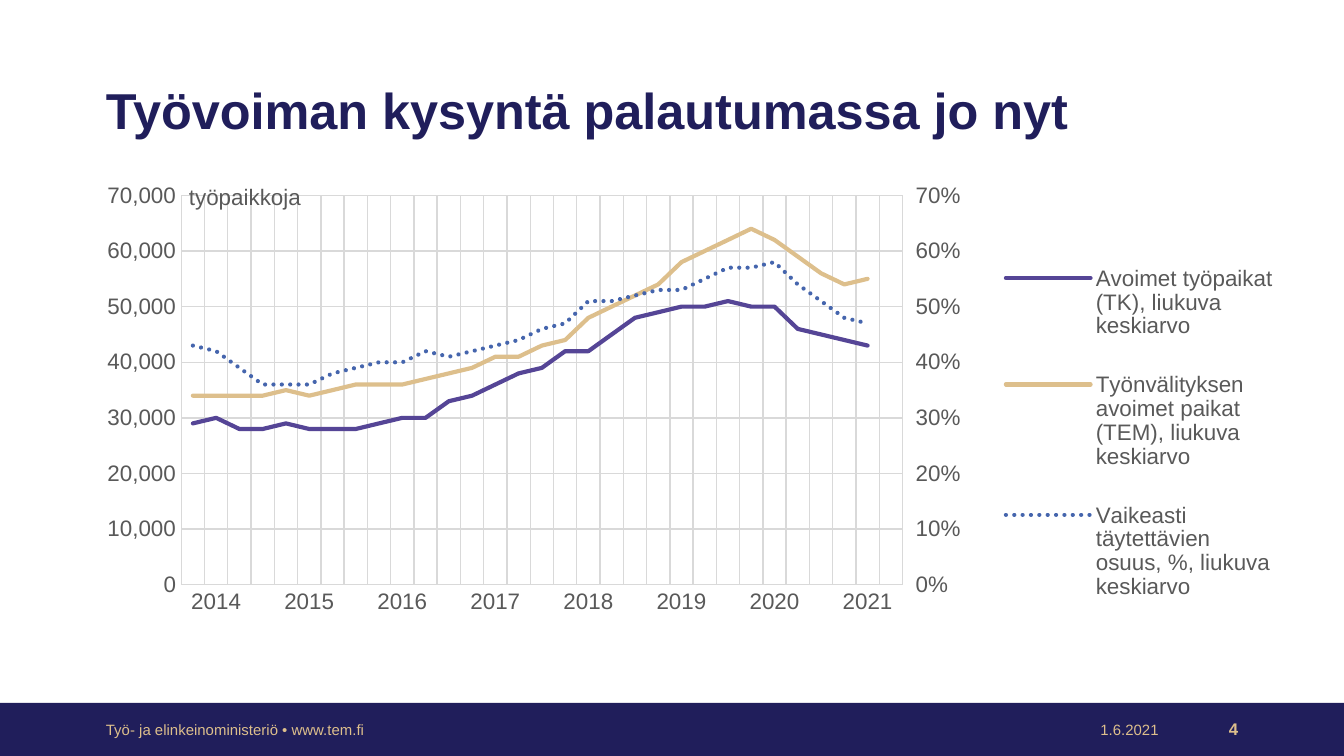
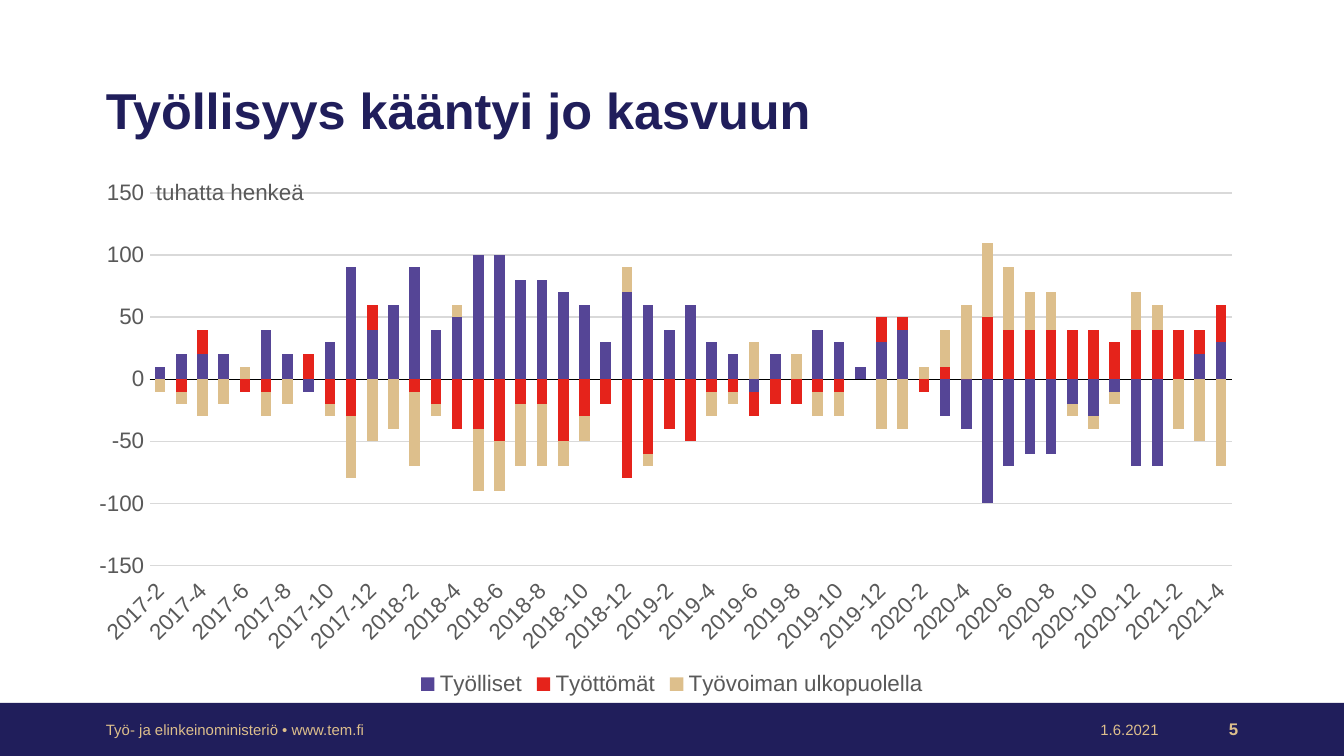
from copy import deepcopy
from dataclasses import dataclass

from pptx import Presentation
from pptx import util as u
from pptx.chart.data import CategoryChartData
from pptx.dml.color import RGBColor
from pptx.enum import chart as ch, dml, shapes, text
from pptx.oxml.xmlchemy import OxmlElement


@dataclass(frozen=True)
class Theme:
    font: str = "Arial"
    navy: str = "201E5B"
    violet: str = "554596"
    sand: str = "DDBF8C"
    blue: str = "4565AD"
    red: str = "E5231B"
    grey: str = "595959"
    grid: str = "D9D9D9"
    black: str = "000000"
    title: float = 27
    chart: float = 12
    footer: float = 8
    number: float = 9
    hairline: float = 0.75
    curve: float = 2.25


def rgb(colour):
    return RGBColor.from_string(colour)


def valued(tag, val):
    element = OxmlElement(tag)
    element.set("val", str(val))
    return element


def manual_layout(x, y, w=None, h=None, inner=False):
    layout = OxmlElement("c:layout")
    manual = OxmlElement("c:manualLayout")
    layout.append(manual)
    if inner:
        manual.append(valued("c:layoutTarget", "inner"))
    manual.append(valued("c:xMode", "edge"))
    manual.append(valued("c:yMode", "edge"))
    for name, val in zip("xywh", (x, y, w, h)):
        if val is not None:
            manual.append(valued(f"c:{name}", val))
    return layout


def place(parent, position, layout):
    for old in parent.xpath("c:layout"):
        parent.remove(old)
    parent.insert(position, layout)


class Deck:
    def __init__(self, theme):
        self.theme = theme
        self.prs = Presentation()
        self.prs.slide_width = u.Inches(10)
        self.prs.slide_height = u.Inches(10 * 9 / 16)
        self.slide = None

    def new_slide(self, title, number):
        t = self.theme
        self.slide = self.prs.slides.add_slide(self.prs.slide_layouts[6])
        self.band(0, 5.23, 10, 0.4, t.navy)
        self.label(title, 0.69, 0.43, 7.88, 0.82, t.title, t.navy, bold=True, spacing=0.9)
        right = text.PP_ALIGN.RIGHT
        self.label("Työ- ja elinkeinoministeriö • www.tem.fi", 0.69, 5.34, 3.37, 0.17, t.footer, t.sand)
        self.label("1.6.2021", 7.95, 5.34, 0.77, 0.17, t.footer, t.sand, align=right)
        self.label(str(number), 8.72, 5.34, 0.59, 0.17, t.number, t.sand, bold=True, align=right)

    def band(self, x, y, w, h, colour):
        band = self.slide.shapes.add_shape(
            shapes.MSO_SHAPE.RECTANGLE, *map(u.Inches, (x, y, w, h)))
        band.shadow.inherit = False
        band.fill.solid()
        band.fill.fore_color.rgb = rgb(colour)
        band.line.fill.background()

    def label(self, words, x, y, w, h, size, colour, bold=False,
              align=text.PP_ALIGN.LEFT, spacing=None):
        frame = self.slide.shapes.add_textbox(*map(u.Inches, (x, y, w, h))).text_frame
        frame.word_wrap = True
        frame.vertical_anchor = text.MSO_ANCHOR.MIDDLE
        frame.margin_top = frame.margin_bottom = 0
        paragraph = frame.paragraphs[0]
        paragraph.alignment = align
        if spacing:
            paragraph.line_spacing = spacing
        run = paragraph.add_run()
        run.text = words
        self.style(run.font, size, colour, bold)

    def style(self, font, size, colour, bold=False):
        font.name = self.theme.font
        font.size = u.Pt(size)
        font.bold = bold
        font.color.rgb = rgb(colour)

    def rule(self, line, colour, width):
        line.color.rgb = rgb(colour)
        line.width = u.Pt(width)

    def chart(self, kind, categories, series, box, plot, number_format="General"):
        data = CategoryChartData(number_format=number_format)
        data.categories = categories
        for name, values in series:
            data.add_series(name, values)
        chart = self.slide.shapes.add_chart(kind, *map(u.Inches, box), data).chart
        chart.has_title = False
        self.style(chart.font, self.theme.chart, self.theme.grey)
        chart.plots[0].vary_by_categories = False
        place(chart.element.xpath(".//c:plotArea")[0], 0, manual_layout(*plot, inner=True))
        return chart

    def legend(self, chart, position):
        chart.has_legend = True
        chart.legend.position = position
        chart.legend.include_in_layout = False
        self.style(chart.legend.font, self.theme.chart, self.theme.grey)

    def axis(self, axis, line=None, grid=True):
        t = self.theme
        axis.major_tick_mark = axis.minor_tick_mark = ch.XL_TICK_MARK.NONE
        self.style(axis.tick_labels.font, t.chart, t.grey)
        axis.has_major_gridlines = grid
        if grid:
            self.rule(axis.major_gridlines.format.line, t.grid, t.hairline)
        if line:
            self.rule(axis.format.line, line, t.hairline)
        else:
            axis.format.line.fill.background()

    def category_axis(self, chart, line, grid, angle, skip):
        self.axis(chart.category_axis, line, grid)
        element = chart.element.xpath(".//c:catAx")[0]
        element.xpath("c:txPr/a:bodyPr")[0].set("rot", str(angle * 60000))
        element.xpath("c:lblOffset")[0].addnext(valued("c:tickLblSkip", skip))

    def value_axis(self, chart, low, high, step, number_format, title, title_at):
        axis = chart.value_axis
        self.axis(axis)
        axis.minimum_scale, axis.maximum_scale, axis.major_unit = low, high, step
        axis.tick_labels.number_format = number_format
        axis.tick_labels.number_format_is_linked = False
        run = axis.axis_title.text_frame.paragraphs[0].add_run()
        run.text = title
        self.style(run.font, self.theme.chart, self.theme.grey)
        element = chart.element.xpath(".//c:valAx")[0]
        heading = element.xpath("c:title")[0]
        body = heading.xpath(".//a:bodyPr")[0]
        body.set("rot", "0")
        body.set("vert", "horz")
        place(heading, 1, manual_layout(*title_at))
        if not element.xpath("c:crossBetween"):
            element.xpath("c:crosses")[0].addnext(valued("c:crossBetween", "between"))

    def right_axis(self, chart, high, step, number_format):
        area = chart.element.xpath(".//c:plotArea")[0]
        main = area.xpath("c:lineChart")[0]
        second = deepcopy(main)
        main.remove(main.xpath("c:ser")[-1])
        for extra in second.xpath("c:ser")[:-1]:
            second.remove(extra)
        main.addnext(second)
        cat, val = area.xpath("c:catAx")[0], area.xpath("c:valAx")[0]
        right_cat, right_val = deepcopy(cat), deepcopy(val)
        val.addnext(right_val)
        right_val.addnext(right_cat)
        for axis in (right_cat, right_val):
            for part in axis.xpath("c:majorGridlines | c:title"):
                axis.remove(part)
        ids = {cat.xpath("c:axId")[0].get("val"): "5001",
               val.xpath("c:axId")[0].get("val"): "5002"}
        for owner in (second, right_cat, right_val):
            for link in owner.xpath("c:axId | c:crossAx"):
                link.set("val", ids[link.get("val")])
        right_cat.xpath("c:delete")[0].set("val", "1")
        changes = {"c:axPos": "r", "c:crosses": "max", "c:majorTickMark": "out",
                   "c:scaling/c:max": high, "c:majorUnit": step}
        for name, val in changes.items():
            right_val.xpath(name)[0].set("val", str(val))
        right_val.xpath("c:numFmt")[0].set("formatCode", number_format)


def demand_slide(deck):
    t = deck.theme
    deck.new_slide("Työvoiman kysyntä palautumassa jo nyt", 4)
    quarters = [str(2014 + i // 4) if i % 4 == 1 else "" for i in range(31)]
    open_jobs = [29, 30, 28, 28, 29, 28, 28, 28, 29, 30, 30, 33, 34, 36, 38, 39, 42, 42,
                 45, 48, 49, 50, 50, 51, 50, 50, 46, 45, 44, 43]
    agency_jobs = [34, 34, 34, 34, 35, 34, 35, 36, 36, 36, 37, 38, 39, 41, 41, 43, 44, 48,
                   50, 52, 54, 58, 60, 62, 64, 62, 59, 56, 54, 55]
    hard_to_fill = [43, 42, 39, 36, 36, 36, 38, 39, 40, 40, 42, 41, 42, 43, 44, 46, 47, 51,
                    51, 52, 53, 53, 55, 57, 57, 58, 54, 51, 48, 47]
    series = [
        ("Avoimet työpaikat (TK), liukuva keskiarvo", [v * 1000 for v in open_jobs] + [None]),
        ("Työnvälityksen avoimet paikat (TEM), liukuva keskiarvo",
         [v * 1000 for v in agency_jobs] + [None]),
        ("Vaikeasti täytettävien osuus, %, liukuva keskiarvo",
         [v / 100 for v in hard_to_fill] + [None]),
    ]
    chart = deck.chart(ch.XL_CHART_TYPE.LINE, quarters, series,
                       (0.69, 1.25, 8.9, 3.65), (0.074, 0.056, 0.603, 0.794))
    for curve, colour in zip(chart.plots[0].series, (t.violet, t.sand, t.blue)):
        curve.smooth = False
        curve.marker.style = ch.XL_MARKER_STYLE.NONE
        deck.rule(curve.format.line, colour, t.curve)
    curve.format.line.dash_style = dml.MSO_LINE.ROUND_DOT
    for line in chart.element.xpath(".//c:ser/c:spPr/a:ln"):
        line.set("cap", "rnd")
    deck.category_axis(chart, t.grid, True, -1000, 1)
    deck.value_axis(chart, 0, 70000, 10000, "#,##0", "työpaikkoja", (0.077, 0.022))
    deck.legend(chart, ch.XL_LEGEND_POSITION.RIGHT)
    place(chart.element.xpath(".//c:legend")[0], 1, manual_layout(0.76, 0.13, 0.23, 0.82))
    deck.right_axis(chart, 0.7, 0.1, "0%")


def employment_slide(deck):
    t = deck.theme
    deck.new_slide("Työllisyys kääntyi jo kasvuun", 5)
    months = [f"{2017 + i // 12}-{i % 12 + 1}" for i in range(1, 52)]
    series = [
        ("Työlliset", [
            10, 20, 20, 20, 0, 40, 20, -10, 30, 90, 40, 60, 90, 40, 50, 100, 100,
            80, 80, 70, 60, 30, 70, 60, 40, 60, 30, 20, -10, 20, 0, 40, 30, 10,
            30, 40, 0, -30, -40, -100, -70, -60, -60, -20, -30, -10, -70, -70, 0, 20, 30]),
        ("Työttömät", [
            0, -10, 20, 0, -10, -10, 0, 20, -20, -30, 20, 0, -10, -20, -40, -40, -50,
            -20, -20, -50, -30, -20, -80, -60, -40, -50, -10, -10, -20, -20, -20, -10, -10, 0,
            20, 10, -10, 10, 0, 50, 40, 40, 40, 40, 40, 30, 40, 40, 40, 20, 30]),
        ("Työvoiman ulkopuolella", [
            -10, -10, -30, -20, 10, -20, -20, 0, -10, -50, -50, -40, -60, -10, 10, -50, -40,
            -50, -50, -20, -20, 0, 20, -10, 0, 0, -20, -10, 30, 0, 20, -20, -20, 0,
            -40, -40, 10, 30, 60, 60, 50, 30, 30, -10, -10, -10, 30, 20, -40, -50, -70]),
    ]
    chart = deck.chart(ch.XL_CHART_TYPE.COLUMN_STACKED, months, series,
                       (0.69, 1.25, 8.62, 3.97), (0.049, 0.047, 0.934, 0.698))
    plot = chart.plots[0]
    plot.gap_width = plot.overlap = 100
    for group, colour in zip(plot.series, (t.violet, t.red, t.sand)):
        group.invert_if_negative = False
        group.format.fill.solid()
        group.format.fill.fore_color.rgb = rgb(colour)
    deck.category_axis(chart, t.black, False, -45, 2)
    chart.category_axis.tick_label_position = ch.XL_TICK_LABEL_POSITION.LOW
    deck.value_axis(chart, -150, 150, 50, "General", "tuhatta henkeä", (0.051, 0.011))
    deck.legend(chart, ch.XL_LEGEND_POSITION.BOTTOM)


def main():
    deck = Deck(Theme())
    demand_slide(deck)
    employment_slide(deck)
    deck.prs.save("out.pptx")


if __name__ == "__main__":
    main()
